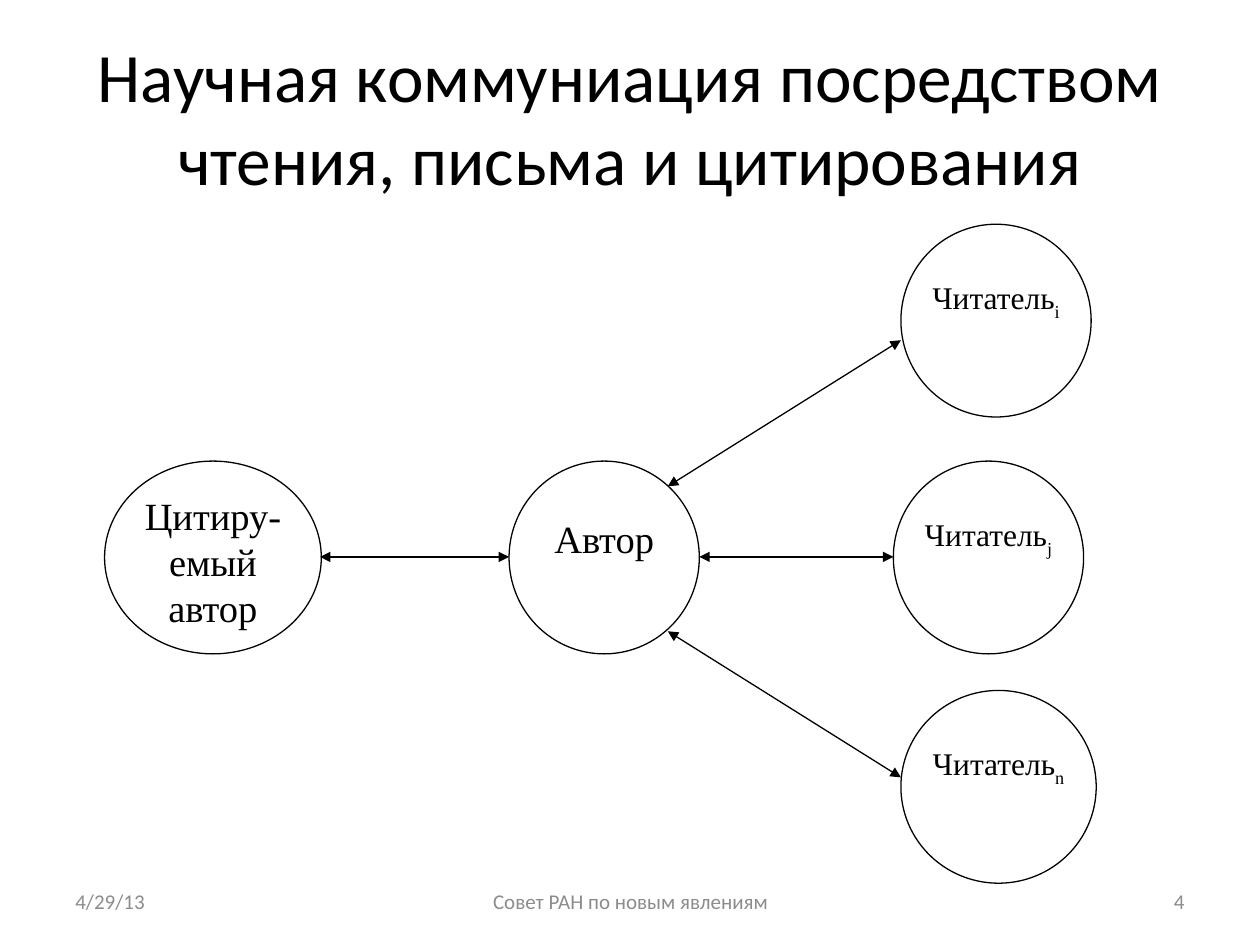
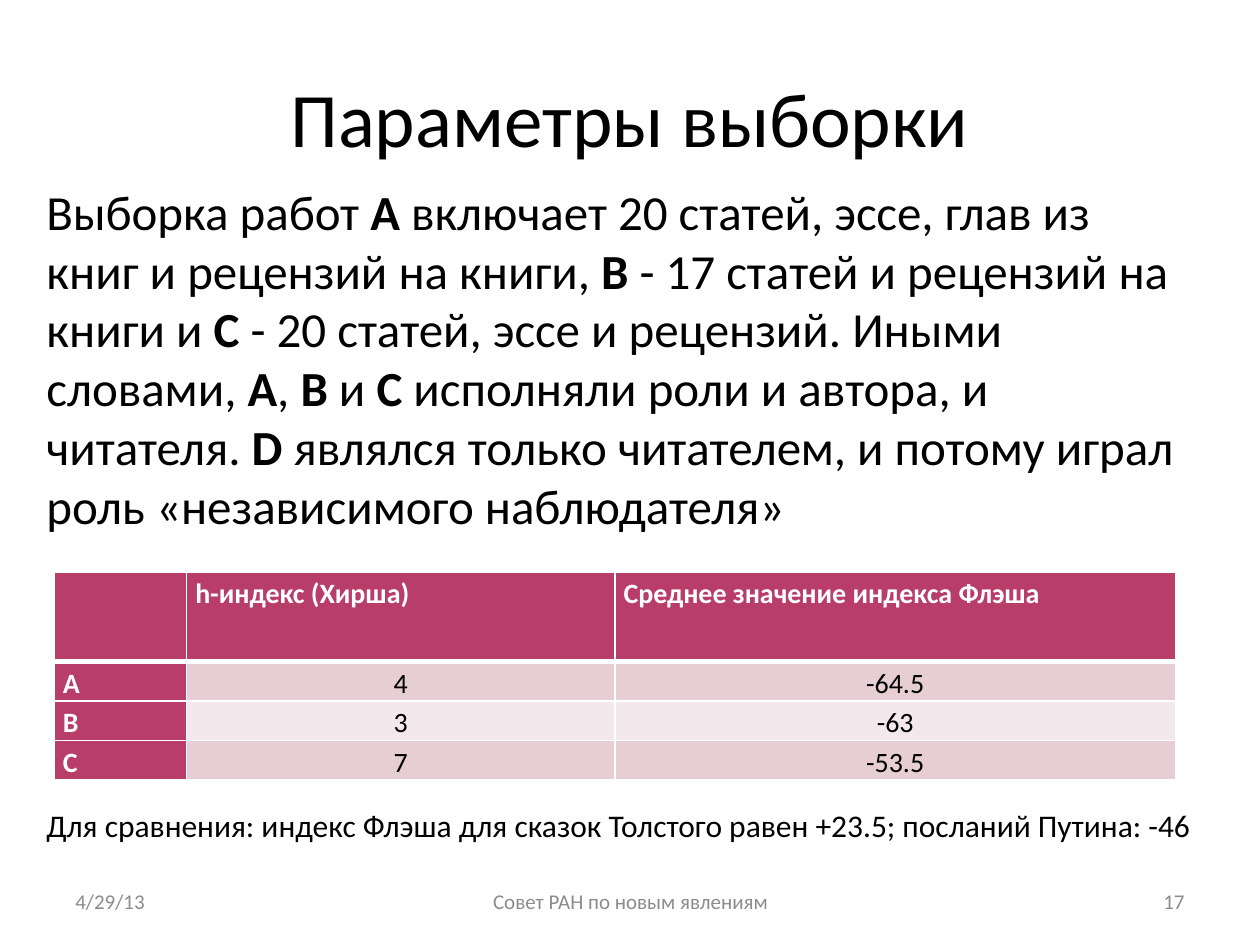
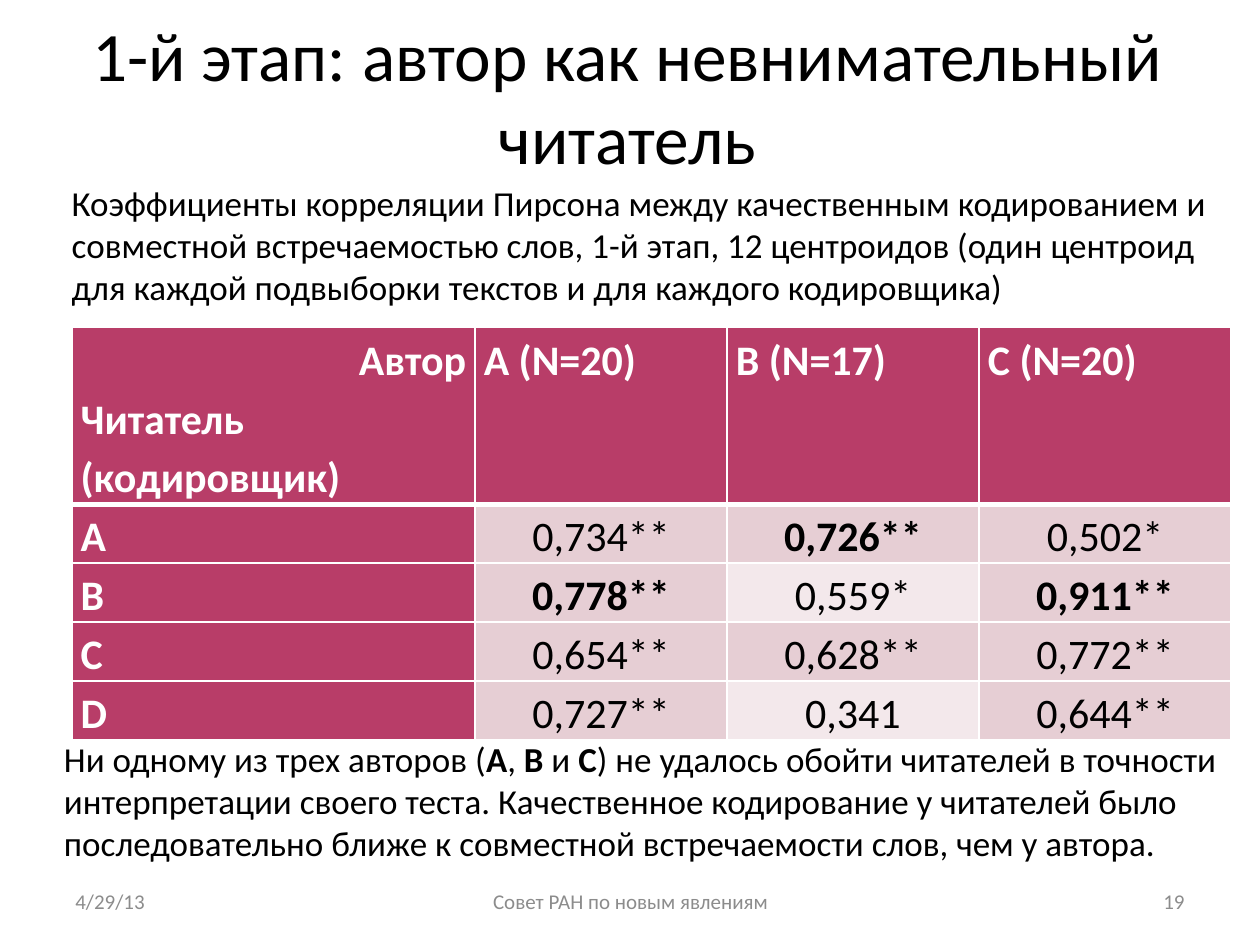
from dataclasses import dataclass, replace
from typing import Any, NamedTuple, Optional

import lxml.etree
import pptx
import pptx.dml.color
import pptx.enum.shapes
import pptx.enum.text
import pptx.oxml
import pptx.oxml.ns
import pptx.util

Inches = pptx.util.Inches
Pt = pptx.util.Pt
Align = pptx.enum.text.PP_ALIGN
Anchor = pptx.enum.text.MSO_ANCHOR
AutoSize = pptx.enum.text.MSO_AUTO_SIZE
qn = pptx.oxml.ns.qn


# Theme: colours, fonts and type sizes
@dataclass(frozen=True)
class Theme:
    ink: str = "000000"
    paper: str = "FFFFFF"
    muted: str = "8C8C8C"
    accent: str = "B83D68"
    band_dark: str = "E6CED4"
    band_light: str = "F3E8EB"
    font: str = "Calibri"
    diagram_font: str = "Times New Roman"
    title: float = 44
    long_title: float = 39.6
    body: float = 28
    remark: float = 20
    comparison: float = 18
    footer: float = 12
    author: float = 22
    reader: float = 18
    hairline: float = 0.75
    grid: float = 1
    header_rule: float = 3


THEME = Theme()


class Area(NamedTuple):
    left: float
    top: float
    width: float
    height: float

    def lengths(self) -> list[int]:
        return [Inches(value) for value in self]


@dataclass(frozen=True)
class TextStyle:
    size: float
    color: str = THEME.ink
    font: str = THEME.font
    bold: bool = False
    align: Any = Align.LEFT
    spacing: Optional[float] = None


@dataclass(frozen=True)
class Circle:
    area: Area
    text: str
    size: float = THEME.reader
    subscript: str = ""
    inset_top: float = 0.2


class Arrow(NamedTuple):
    start_x: float
    start_y: float
    end_x: float
    end_y: float


@dataclass(frozen=True)
class Grid:
    area: Area
    columns: list[float]
    heights: list[float]
    rows: list[list[str]]
    size: float
    label_align: Any = Align.LEFT
    body_anchor: Any = Anchor.TOP
    band_columns: bool = False


# Shared helpers
def apply(target: Any, values: dict[str, Any]) -> None:
    for name, value in values.items():
        setattr(target, name, value)


def rgb(color: str) -> pptx.dml.color.RGBColor:
    return pptx.dml.color.RGBColor.from_string(color)


def paint(fill: Any, color: str) -> None:
    fill.solid()
    fill.fore_color.rgb = rgb(color)


def add_span(para: Any, text: str, style: TextStyle, bold: bool) -> Any:
    span = para.add_run()
    span.text = text
    apply(span.font, {"name": style.font, "size": Pt(style.size), "bold": bold})
    span.font.color.rgb = rgb(style.color)
    return span


def write(frame: Any, text: str, style: TextStyle) -> None:
    """Each line is a paragraph; text between bars is bold."""
    for index, line in enumerate(text.split("\n")):
        para = frame.add_paragraph() if index else frame.paragraphs[0]
        apply(para, {"alignment": style.align, "line_spacing": style.spacing})
        for number, part in enumerate(line.split("|")):
            if part:
                add_span(para, part, style, style.bold or number % 2 == 1)


def add_text(page: Any, area: Area, text: str, style: TextStyle,
             anchor: Any = Anchor.TOP, wrap: bool = True, grow: bool = False) -> None:
    box = page.shapes.add_textbox(*area.lengths())
    apply(box.text_frame, {
        "word_wrap": wrap,
        "vertical_anchor": anchor,
        "auto_size": AutoSize.SHAPE_TO_FIT_TEXT if grow else AutoSize.NONE,
    })
    write(box.text_frame, text, style)


def add_page(deck: Any, title: str, number: int, size: float = THEME.long_title,
             title_area: Area = Area(0.5, 0.3, 9, 1.25)) -> Any:
    page = deck.slides.add_slide(deck.slide_layouts[6])
    paint(page.background.fill, THEME.paper)
    add_text(page, title_area, title, TextStyle(size, align=Align.CENTER), Anchor.MIDDLE)
    footers = [
        (0.5, 2.33, "4/29/13", Align.LEFT),
        (3.42, 3.17, "Совет РАН по новым явлениям", Align.CENTER),
        (7.17, 2.33, str(number), Align.RIGHT),
    ]
    for left, width, text, align in footers:
        style = TextStyle(THEME.footer, THEME.muted, align=align)
        add_text(page, Area(left, 6.95, width, 0.4), text, style, Anchor.MIDDLE)
    return page


# Diagram parts
def add_circle(page: Any, circle: Circle) -> None:
    shape = page.shapes.add_shape(
        pptx.enum.shapes.MSO_SHAPE.OVAL, *circle.area.lengths())
    shape.shadow.inherit = False
    paint(shape.fill, THEME.paper)
    paint(shape.line.fill, THEME.ink)
    shape.line.width = Pt(THEME.hairline)
    inset = Inches(0.02)
    apply(shape.text_frame, {
        "word_wrap": True,
        "vertical_anchor": Anchor.TOP,
        "margin_left": inset,
        "margin_right": inset,
        "margin_bottom": inset,
        "margin_top": Inches(circle.inset_top),
    })
    style = TextStyle(circle.size, font=THEME.diagram_font, align=Align.CENTER)
    write(shape.text_frame, circle.text, style)
    if circle.subscript:
        span = add_span(shape.text_frame.paragraphs[0], circle.subscript, style, False)
        span._r.get_or_add_rPr().set("baseline", "-30000")


def add_arrow(page: Any, arrow: Arrow) -> None:
    line = page.shapes.add_connector(
        pptx.enum.shapes.MSO_CONNECTOR.STRAIGHT, *[Inches(value) for value in arrow])
    paint(line.line.fill, THEME.ink)
    line.line.width = Pt(THEME.hairline)
    outline = line.line._get_or_add_ln()
    for end in ("a:headEnd", "a:tailEnd"):
        lxml.etree.SubElement(outline, qn(end), type="triangle")
    lxml.etree.SubElement(line._element.spPr, qn("a:effectLst"))


# Table parts
def add_borders(cell: Any, row: int) -> None:
    properties = cell._tc.get_or_add_tcPr()
    thick = {(0, "B"), (1, "T")}
    for index, side in enumerate("LRTB"):
        points = THEME.header_rule if (row, side) in thick else THEME.grid
        border = lxml.etree.Element(qn(f"a:ln{side}"), w=str(Pt(points)))
        fill = lxml.etree.SubElement(border, qn("a:solidFill"))
        lxml.etree.SubElement(fill, qn("a:srgbClr"), val=THEME.paper)
        properties.insert(index, border)


def cell_fill(grid: Grid, row: int, column: int) -> str:
    if row == 0 or column == 0:
        return THEME.accent
    light = row % 2 == 0 and (not grid.band_columns or column % 2 == 0)
    return THEME.band_light if light else THEME.band_dark


def add_grid(page: Any, grid: Grid) -> Any:
    frame = page.shapes.add_table(
        len(grid.rows), len(grid.columns), *grid.area.lengths())
    table = frame.table
    for column, width in zip(table.columns, grid.columns):
        column.width = Inches(width)
    for row, height in zip(table.rows, grid.heights):
        row.height = Inches(height)
    label = TextStyle(grid.size, THEME.paper, bold=True,
                      align=grid.label_align, spacing=1.15)
    value = replace(label, color=THEME.ink, bold=False, align=Align.CENTER)
    for row, texts in enumerate(grid.rows):
        for column, text in enumerate(texts):
            cell = table.cell(row, column)
            apply(cell, {
                "margin_left": Inches(0.07),
                "margin_right": Inches(0.07),
                "margin_top": 0,
                "margin_bottom": 0,
                "vertical_anchor": grid.body_anchor if row else Anchor.TOP,
            })
            paint(cell.fill, cell_fill(grid, row, column))
            add_borders(cell, row)
            write(cell.text_frame, text, value if row and column else label)
    return table


# Slides
def build_communication(deck: Any) -> None:
    page = add_page(
        deck, "Научная коммуниация посредством чтения, письма и цитирования", 4)
    circles = [
        Circle(Area(0.83, 3.66, 1.72, 1.53), "Цитиру-емый автор",
               THEME.author, inset_top=0.02),
        Circle(Area(4.04, 3.66, 1.51, 1.53), "Автор", THEME.author),
        Circle(Area(7.09, 3.66, 1.51, 1.53), "Читатель", subscript="j"),
        Circle(Area(7.15, 1.78, 1.51, 1.53), "Читатель", subscript="i"),
        Circle(Area(7.15, 5.48, 1.55, 1.53), "Читатель", subscript="n"),
    ]
    arrows = [
        Arrow(2.54, 4.42, 4.04, 4.42),
        Arrow(5.55, 4.42, 7.09, 4.42),
        Arrow(5.3, 3.86, 7.15, 2.7),
        Arrow(5.3, 5.01, 7.15, 6.17),
    ]
    for circle in circles:
        add_circle(page, circle)
    for arrow in arrows:
        add_arrow(page, arrow)


def build_sample(deck: Any) -> None:
    page = add_page(deck, "Параметры выборки", 17, THEME.title)
    add_grid(page, Grid(
        Area(0.43, 4.54, 8.9, 1.63),
        columns=[1.05, 3.4, 4.45],
        heights=[0.71] + [0.31] * 3,
        rows=[
            ["", "h-индекс (Хирша)", "Среднее значение индекса Флэша"],
            ["А", "4", "-64.5"],
            ["В", "3", "-63"],
            ["С", "7", "-53.5"],
        ],
        size=16,
        body_anchor=Anchor.BOTTOM,
    ))
    add_text(
        page, Area(0.27, 1.39, 9.21, 2.93),
        "Выборка работ |А| включает 20 статей, эссе, глав из книг и рецензий на книги, "
        "|B| - 17 статей и рецензий на книги и |C| - 20 статей, эссе и рецензий. "
        "Иными словами, |A|, |B| и |C| исполняли роли и автора, и читателя. "
        "|D| являлся только читателем, и потому играл роль «независимого наблюдателя»",
        TextStyle(THEME.body), grow=True)
    add_text(
        page, Area(0.27, 6.35, 9.33, 0.4),
        "Для сравнения: индекс Флэша для сказок Толстого равен +23.5; "
        "посланий Путина: -46",
        TextStyle(THEME.comparison), wrap=False, grow=True)


def build_first_stage(deck: Any) -> None:
    page = add_page(deck, "1-й этап: автор как невнимательный читатель", 19,
                    title_area=Area(0.48, 0.13, 9, 1.25))
    table = add_grid(page, Grid(
        Area(0.57, 2.6, 9.2, 3.22),
        columns=[3.2] + [2] * 3,
        heights=[1.38] + [0.46] * 4,
        rows=[
            ["Автор\nЧитатель (кодировщик)", "А (N=20)", "B (N=17)", "C (N=20)"],
            ["A", "0,734**", "|0,726**|", "0,502*"],
            ["B", "|0,778**|", "0,559*", "|0,911**|"],
            ["C", "0,654**", "0,628**", "0,772**"],
            ["D", "0,727**", "0,341", "0,644**"],
        ],
        size=24,
        label_align=Align.JUSTIFY,
        band_columns=True,
    ))
    table.cell(0, 0).text_frame.paragraphs[0].alignment = Align.RIGHT
    add_text(
        page, Area(0.41, 5.8, 9.37, 1.11),
        "Ни одному из трех авторов (|A|, |B| и |C|) не удалось обойти читателей "
        "в точности интерпретации своего теста. Качественное кодирование у читателей "
        "было последовательно ближе к совместной встречаемости слов, чем у автора.",
        TextStyle(THEME.remark), grow=True)
    add_text(
        page, Area(0.47, 1.39, 9.26, 1.45),
        "Коэффициенты корреляции Пирсона между качественным кодированием и совместной "
        "встречаемостью слов, 1-й этап, 12 центроидов (один центроид для каждой "
        "подвыборки текстов и для каждого кодировщика)",
        TextStyle(THEME.remark), grow=True)


def main() -> None:
    deck = pptx.Presentation()
    apply(deck, {"slide_width": Inches(10), "slide_height": Inches(7.5)})
    for build in (build_communication, build_sample, build_first_stage):
        build(deck)
    deck.save("out.pptx")


if __name__ == "__main__":
    main()
